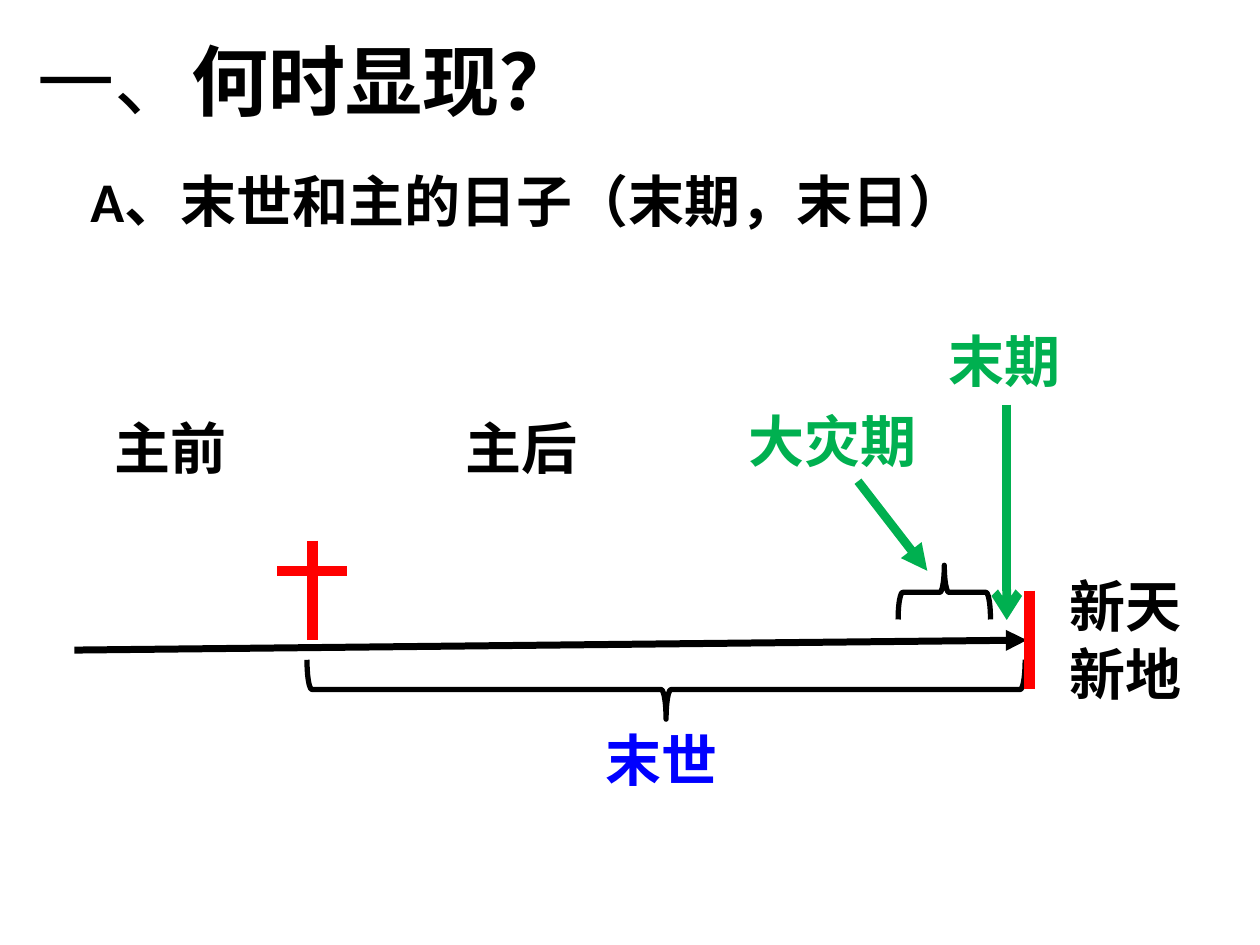
from lxml import etree
from pptx import Presentation
from pptx import util as u
from pptx.dml.color import RGBColor
from pptx.enum import shapes, text
from pptx.oxml.ns import qn

COLORS = {"ink": "000000", "cross": "FF0000", "age": "0000FF", "end": "00B050"}


class Timeline:
    """Draws on one page; all lengths are in points."""

    font_name = "Calibri"
    title_size = 44
    body_size = 32

    def __init__(self, page):
        self.page = page

    def color(self, name):
        return RGBColor.from_string(COLORS[name])

    def set_font(self, font, size, color, bold=None):
        font.name = self.font_name
        font.size = u.Pt(size)
        font.color.rgb = self.color(color)
        font.bold = bold

    def title(self, left, top, width, height, number, words):
        box = self.page.shapes.title
        box.left, box.top = u.Pt(left), u.Pt(top)
        box.width, box.height = u.Pt(width), u.Pt(height)
        box.text_frame.vertical_anchor = text.MSO_ANCHOR.MIDDLE
        para = box.text_frame.paragraphs[0]
        para.alignment = text.PP_ALIGN.LEFT
        self.set_font(para.font, self.title_size, "ink")
        for part, bold in ((number, False), (words, True)):
            span = para.add_run()
            span.text = part
            self.set_font(span.font, self.title_size, "ink", bold)

    def label(self, left, top, width, words, color="ink", height=46):
        box = self.page.shapes.add_textbox(
            u.Pt(left), u.Pt(top), u.Pt(width), u.Pt(height))
        frame = box.text_frame
        frame.word_wrap = True
        frame.auto_size = text.MSO_AUTO_SIZE.SHAPE_TO_FIT_TEXT
        para = frame.paragraphs[0]
        para.text = words
        self.set_font(para.font, self.body_size, color, True)

    def line(self, start, end, color, width, head=None):
        """Straight line, with an arrowhead at its end if head names one."""
        line = self.page.shapes.add_connector(
            shapes.MSO_CONNECTOR.STRAIGHT, *map(u.Pt, start + end))
        line.line.color.rgb = self.color(color)
        line.line.width = u.Pt(width)
        properties = line._element.spPr
        if head:
            outline = properties.find(qn("a:ln"))
            etree.SubElement(outline, qn("a:tailEnd"), type=head)
        etree.SubElement(properties, qn("a:effectLst"))

    def brace(self, left, top, width, height, rotation):
        """Brace over the given visible area, turned by a quarter."""
        shift = (width - height) / 2
        brace = self.page.shapes.add_shape(
            shapes.MSO_SHAPE.RIGHT_BRACE, u.Pt(left + shift),
            u.Pt(top - shift), u.Pt(height), u.Pt(width))
        brace.rotation = rotation
        brace.shadow.inherit = False
        brace.fill.background()
        brace.line.color.rgb = self.color("ink")
        brace.line.width = u.Pt(3)


def main():
    deck = Presentation()
    deck.slide_width, deck.slide_height = u.Pt(720), u.Pt(540)
    page = deck.slides.add_slide(deck.slide_layouts[5])
    chart = Timeline(page)

    chart.title(14.4, 0.7, 648, 90, "一、", "何时显现？")
    chart.label(44.6, 91.4, 572.4, "A、末世和主的日子（末期，末日）")

    # Time axis, with the cross between the two eras
    chart.line((42.5, 371.5), (586.8, 365.8), "ink", 4, "triangle")
    chart.line((178.5, 309), (178.5, 365.8), "cross", 6)
    chart.line((158.4, 326.2), (198, 326.2), "cross", 6)
    for left, era in ((58.3, "主前"), (259.2, "主后")):
        chart.label(left, 232.6, 86.4, era)

    # Last age
    chart.brace(175.4, 377, 410.4, 34, 90)
    chart.label(339.1, 411, 86.4, "末世", "age")

    # New heaven and new earth
    chart.line((588.2, 337.5), (588.2, 394), "cross", 6)
    chart.label(604.1, 323.3, 86.4, "新天新地", height=85)

    # End time and great tribulation
    chart.line((575.3, 231.3), (575.3, 354.3), "end", 5, "arrow")
    chart.label(535, 182.9, 86.4, "末期", "end")
    chart.brace(513.2, 323, 52.8, 31, 270)
    chart.line((490.3, 275), (529.9, 326.2), "end", 5, "triangle")
    chart.label(420.5, 229, 118, "大灾期", "end")

    deck.save("out.pptx")


if __name__ == "__main__":
    main()
